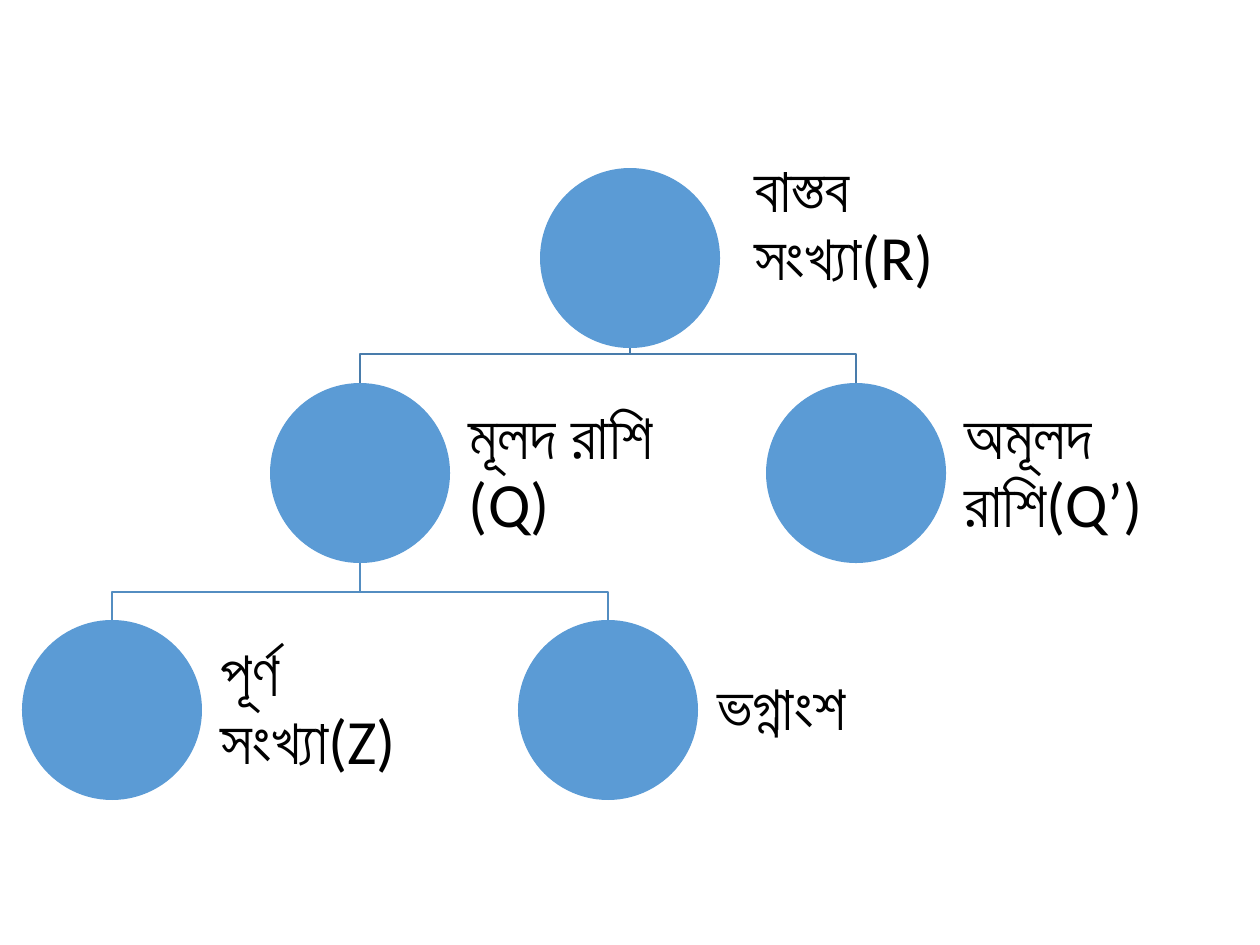
from pptx import Presentation
from pptx.dml.color import RGBColor
from pptx.enum.shapes import MSO_SHAPE
from pptx.enum.text import MSO_ANCHOR, PP_ALIGN
from pptx.util import Emu, Inches, Pt

NUMBER_SETS = {
    "real": {"text": "বাস্তব সংখ্যা(R)", "at": (540, 168), "label_shift": (195, -32)},
    "rational": {"text": "মূলদ রাশি (Q)", "at": (270, 383)},
    "integer": {"text": "পূর্ণ সংখ্যা(Z)", "at": (22, 620)},
    "fraction": {"text": "ভগ্নাংশ", "at": (518, 620)},
    "irrational": {"text": "অমূলদ রাশি(Q’)", "at": (766, 383)},
}
BRANCHES = [
    ("real", "irrational", 354, "497CAB"),
    ("rational", "fraction", 592, "538DC1"),
    ("rational", "integer", 592, "538DC1"),
    ("real", "rational", 354, "497CAB"),
]
DIAMETER = 180
LABEL_WIDTH = 271
LABEL_INSET = 19
EMU_PER_PX = 914400 / 126


def px(length):
    return Emu(round(length * EMU_PER_PX))


def color(hex_value):
    return RGBColor.from_string(hex_value)


def add_text(slide, text, left, top, width, height, size=36, font="Calibri", fill="000000"):
    label = slide.shapes.add_textbox(px(left), px(top), px(width), px(height))
    frame = label.text_frame
    frame.word_wrap = True
    frame.vertical_anchor = MSO_ANCHOR.MIDDLE
    frame.margin_left = frame.margin_right = px(LABEL_INSET)
    frame.margin_top = frame.margin_bottom = px(LABEL_INSET)
    paragraph = frame.paragraphs[0]
    paragraph.alignment = PP_ALIGN.LEFT
    paragraph.line_spacing = 0.9
    run = paragraph.add_run()
    run.text = text
    run.font.size = Pt(size)
    run.font.name = font
    run.font.color.rgb = color(fill)


def add_branch(slide, parent, child, bend, line_color):
    parent_left, parent_top = NUMBER_SETS[parent]["at"]
    child_left, child_top = NUMBER_SETS[child]["at"]
    start_x = parent_left + DIAMETER // 2
    end_x = child_left + DIAMETER // 2
    outline = slide.shapes.build_freeform(start_x, parent_top + DIAMETER, scale=EMU_PER_PX)
    outline.add_line_segments([(start_x, bend), (end_x, bend), (end_x, child_top)], close=False)
    branch = outline.convert_to_shape()
    branch.shadow.inherit = False
    branch.fill.background()
    branch.line.color.rgb = color(line_color)
    branch.line.width = Pt(1)


def add_number_set(slide, text, at, label_shift=(DIAMETER, 0)):
    left, top = at
    circle = slide.shapes.add_shape(MSO_SHAPE.OVAL, px(left), px(top), px(DIAMETER), px(DIAMETER))
    circle.shadow.inherit = False
    circle.fill.solid()
    circle.fill.fore_color.rgb = color("5B9BD5")
    circle.line.fill.background()
    shift_x, shift_y = label_shift
    add_text(slide, text, left + shift_x, top + shift_y, LABEL_WIDTH, DIAMETER)


def main():
    deck = Presentation()
    deck.slide_width, deck.slide_height = Inches(10), Inches(7.5)
    slide = deck.slides.add_slide(deck.slide_layouts[6])
    for branch in BRANCHES:
        add_branch(slide, *branch)
    for number_set in NUMBER_SETS.values():
        add_number_set(slide, **number_set)
    deck.save("out.pptx")


if __name__ == "__main__":
    main()
